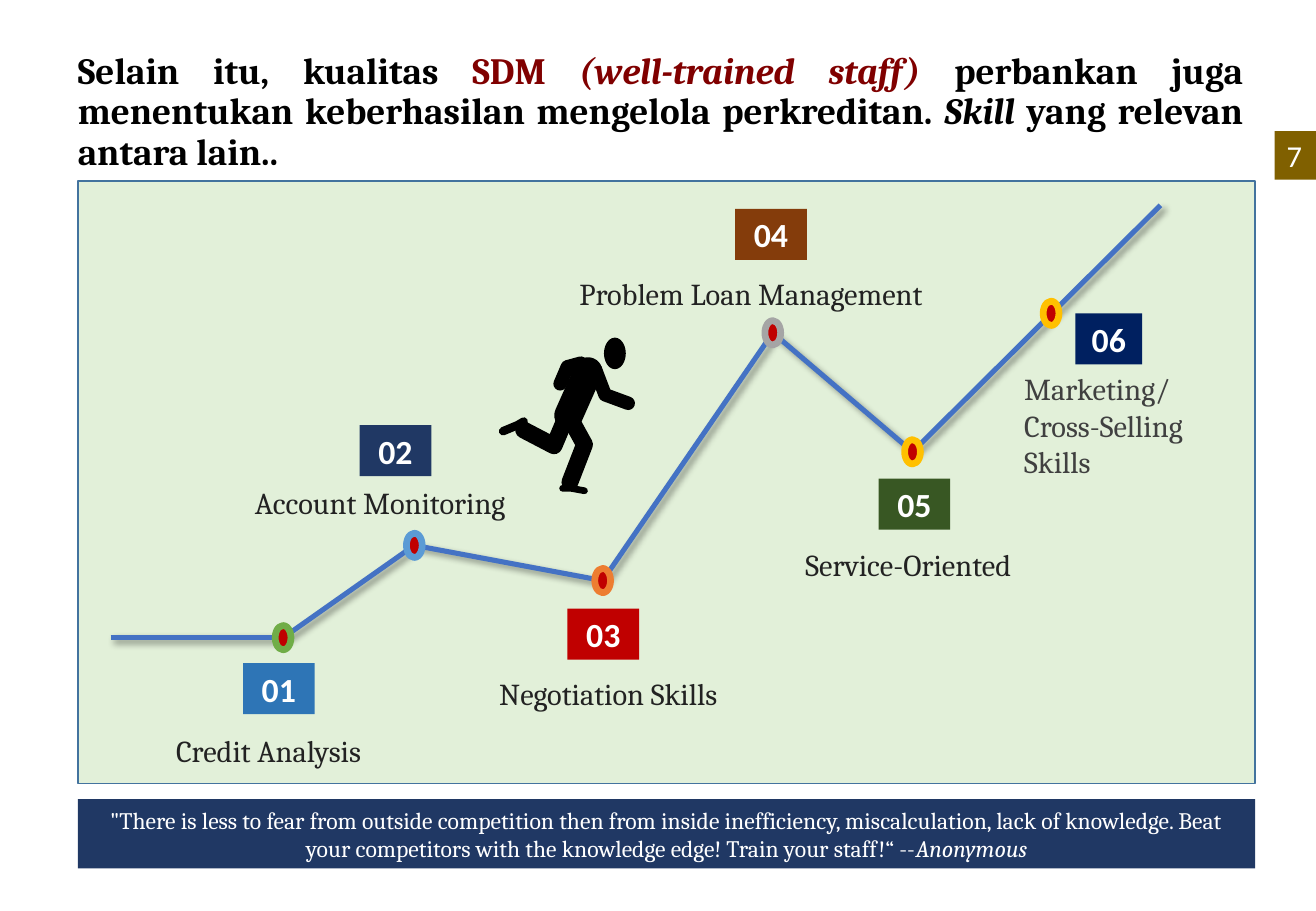
from collections import namedtuple
from lxml.etree import SubElement
from pptx import Presentation
from pptx.dml.color import RGBColor
from pptx.enum.shapes import MSO_CONNECTOR, MSO_SHAPE
from pptx.enum.text import MSO_ANCHOR, MSO_AUTO_SIZE, PP_ALIGN
from pptx.oxml.ns import qn
from pptx.util import Inches, Pt

WHITE = RGBColor(0xFF, 0xFF, 0xFF)
BLACK = RGBColor(0, 0, 0)
MAROON = RGBColor(0x80, 0, 0)
NAVY = RGBColor(0x20, 0x38, 0x64)
DEEP_BLUE = RGBColor(0, 0x20, 0x60)
SKY = RGBColor(0x2E, 0x75, 0xB6)
LIGHT_BLUE = RGBColor(0x5B, 0x9B, 0xD5)
PATH_BLUE = RGBColor(0x44, 0x72, 0xC4)
PANEL_EDGE = RGBColor(0x43, 0x73, 0x9E)
MINT = RGBColor(0xE2, 0xF0, 0xD9)
GREEN = RGBColor(0x70, 0xAD, 0x47)
FOREST = RGBColor(0x38, 0x57, 0x23)
RED = RGBColor(0xC0, 0, 0)
ORANGE = RGBColor(0xED, 0x7D, 0x31)
BROWN = RGBColor(0x84, 0x3C, 0x0B)
GOLD = RGBColor(0xFF, 0xC0, 0)
OLIVE = RGBColor(0x80, 0x60, 0)
SILVER = RGBColor(0xA5, 0xA5, 0xA5)
INK = RGBColor(0x22, 0x22, 0x22)
GREY = RGBColor(0x40, 0x40, 0x40)

# Lengths in inches
SLIDE_W, SLIDE_H = 10.83, 7.5
MARGIN = 0.64
CONTENT_W = 9.69
BADGE_W, BADGE_H = 0.59, 0.42
DOT_W, DOT_H = 0.13, 0.2
PAGE_TAB_W = 0.34

prs = Presentation()
prs.slide_width, prs.slide_height = Inches(SLIDE_W), Inches(SLIDE_H)
s = prs.slides.add_slide(prs.slide_layouts[5])


def add_block(kind, x, y, w, h, fill):
    """Add a plain filled shape without outline or shadow."""
    sp = s.shapes.add_shape(kind, Inches(x), Inches(y), Inches(w), Inches(h))
    sp.shadow.inherit = False
    sp.fill.solid()
    sp.fill.fore_color.rgb = fill
    sp.line.fill.background()
    return sp


def style(r, font, size, color, bold=False, italic=False):
    r.font.name, r.font.size = font, Pt(size)
    r.font.color.rgb = color
    r.font.bold, r.font.italic = bold, italic


# Title
title = s.shapes.title
title.left, title.top = Inches(0.54), Inches(0.3)
title.width, title.height = Inches(9.79), Inches(1.26)
tf = title.text_frame
tf.auto_size = MSO_AUTO_SIZE.NONE
tf.vertical_anchor = MSO_ANCHOR.MIDDLE
p = tf.paragraphs[0]
p.alignment, p.line_spacing = PP_ALIGN.JUSTIFY, 0.9
for text, color, italic in [
    ("Selain itu, kualitas ", BLACK, False),
    ("SDM ", MAROON, False),
    ("(well-trained staff) ", MAROON, True),
    ("perbankan juga menentukan keberhasilan mengelola perkreditan. ", BLACK, False),
    ("Skill", BLACK, True),
    (" yang relevan antara lain..", BLACK, False),
]:
    r = p.add_run()
    r.text = text
    style(r, "Cambria", 22, color, True, italic)

# Panel
panel = add_block(MSO_SHAPE.RECTANGLE, MARGIN, 1.49, CONTENT_W, 4.96, MINT)
panel.line.color.rgb, panel.line.width = PANEL_EDGE, Pt(1)

# Skills: dot is a centre, badge a top left corner, box a left, top, width, height
Skill = namedtuple("Skill", "label dot ring badge fill box spacing ink")
skills = [
    Skill("Credit Analysis", (2.33, 5.25), GREEN, (2, 5.46), SKY,
          (1.35, 5.83, 1.82, 0.48), 1.5, INK),
    Skill("Account Monitoring", (3.41, 4.49), LIGHT_BLUE, (2.96, 3.5), NAVY,
          (2, 3.94, 2.67, 0.37), 1, INK),
    Skill("Negotiation Skills", (4.96, 4.78), ORANGE, (4.67, 5.01), RED,
          (4.01, 5.36, 2.28, 0.53), 1.5, INK),
    Skill("Problem Loan Management", (6.36, 2.74), SILVER, (6.05, 1.72), BROWN,
          (4.67, 2.07, 3.66, 0.53), 1.5, INK),
    Skill("Service-Oriented", (7.51, 3.72), GOLD, (7.23, 3.94), FOREST,
          (6.53, 4.3, 2.1, 0.53), 1.5, INK),
    Skill("Marketing/\nCross-Selling Skills", (8.65, 2.58), GOLD, (8.85, 2.58), DEEP_BLUE,
          (8.33, 3, 1.76, 0.96), 1, GREY),
]

# The path joins the dots; its last stretch runs through the sixth dot
stops = [(0.91, 5.25)] + [skill.dot for skill in skills[:-1]] + [(9.55, 1.69)]
for start, end in zip(stops, stops[1:]):
    segment = s.shapes.add_connector(
        MSO_CONNECTOR.STRAIGHT, *[Inches(v) for v in start + end])
    segment.line.color.rgb, segment.line.width = PATH_BLUE, Pt(3)
    sp_pr = segment.line._get_or_add_ln().getparent()
    effects = SubElement(sp_pr, qn("a:effectLst"))
    shadow = SubElement(effects, qn("a:outerShdw"), blurRad=str(Pt(4)),
                        dist=str(Pt(3)), dir=str(45 * 60000), algn="tl", rotWithShape="0")
    shade = SubElement(shadow, qn("a:srgbClr"), val="000000")
    SubElement(shade, qn("a:alpha"), val="40000")

for number, skill in enumerate(skills, 1):
    x, y = skill.dot
    dot = add_block(MSO_SHAPE.OVAL, x - DOT_W / 2, y - DOT_H / 2, DOT_W, DOT_H, RED)
    dot.line.color.rgb, dot.line.width = skill.ring, Pt(4)

    badge_w = 0.55 if number == len(skills) else BADGE_W
    badge = add_block(MSO_SHAPE.RECTANGLE, *skill.badge, badge_w, BADGE_H, skill.fill)
    badge.text_frame.text = f"{number:02}"
    p = badge.text_frame.paragraphs[0]
    p.alignment = PP_ALIGN.CENTER
    style(p.runs[0], "Calibri", 20, WHITE, True)

    tf = s.shapes.add_textbox(*[Inches(v) for v in skill.box]).text_frame
    tf.word_wrap = True
    tf.text = skill.label
    for p in tf.paragraphs:
        p.line_spacing = skill.spacing
        style(p.runs[0], "Cambria", 18, skill.ink)

# Runner: an oval head, and thick round strokes from joint to joint
add_block(MSO_SHAPE.OVAL, 4.97, 2.78, 0.18, 0.26, BLACK)
runner = {  # part: (stroke width in points, joints in hundredths of an inch)
    "torso": (17, [(484, 306), (468, 342)]),
    "back arm": (8, [(478, 299), (467, 302), (461, 316)]),
    "front arm": (8, [(490, 304), (498, 325), (517, 332)]),
    "back leg": (10, [(464, 348), (456, 367), (431, 354)]),
    "back foot": (5, [(431, 347), (426, 350), (414, 355)]),
    "front leg": (10, [(470, 346), (481, 366), (469, 397)]),
    "front foot": (4, [(463, 402), (470, 402), (481, 404)]),
}
for width, joints in runner.values():
    outline = s.shapes.build_freeform(*joints[0], scale=Inches(0.01))
    outline.add_line_segments(joints[1:], close=False)
    limb = outline.convert_to_shape()
    limb.shadow.inherit = False
    limb.fill.background()
    limb.line.color.rgb, limb.line.width = BLACK, Pt(width)
    ln = limb.line._get_or_add_ln()
    ln.set("cap", "rnd")
    SubElement(ln, qn("a:round"))

# Quote
quote = add_block(MSO_SHAPE.RECTANGLE, MARGIN, 6.58, CONTENT_W, 0.57, NAVY)
p = quote.text_frame.paragraphs[0]
p.alignment = PP_ALIGN.CENTER
for text, italic in [
    ('"There is less to fear from outside competition then from inside inefficiency, '
     "miscalculation, lack of knowledge. Beat your competitors with the knowledge edge! "
     "Train your staff!“ --", False),
    ("Anonymous", True),
]:
    r = p.add_run()
    r.text = text
    style(r, "Cambria", 14, WHITE, italic=italic)

# Page number, flush with the right edge
page = add_block(MSO_SHAPE.RECTANGLE, SLIDE_W - PAGE_TAB_W, 1.08, PAGE_TAB_W, 0.4, OLIVE)
page.text_frame.text = "7"
p = page.text_frame.paragraphs[0]
p.alignment = PP_ALIGN.LEFT
style(p.runs[0], "Calibri", 18, WHITE)

prs.save("out.pptx")
